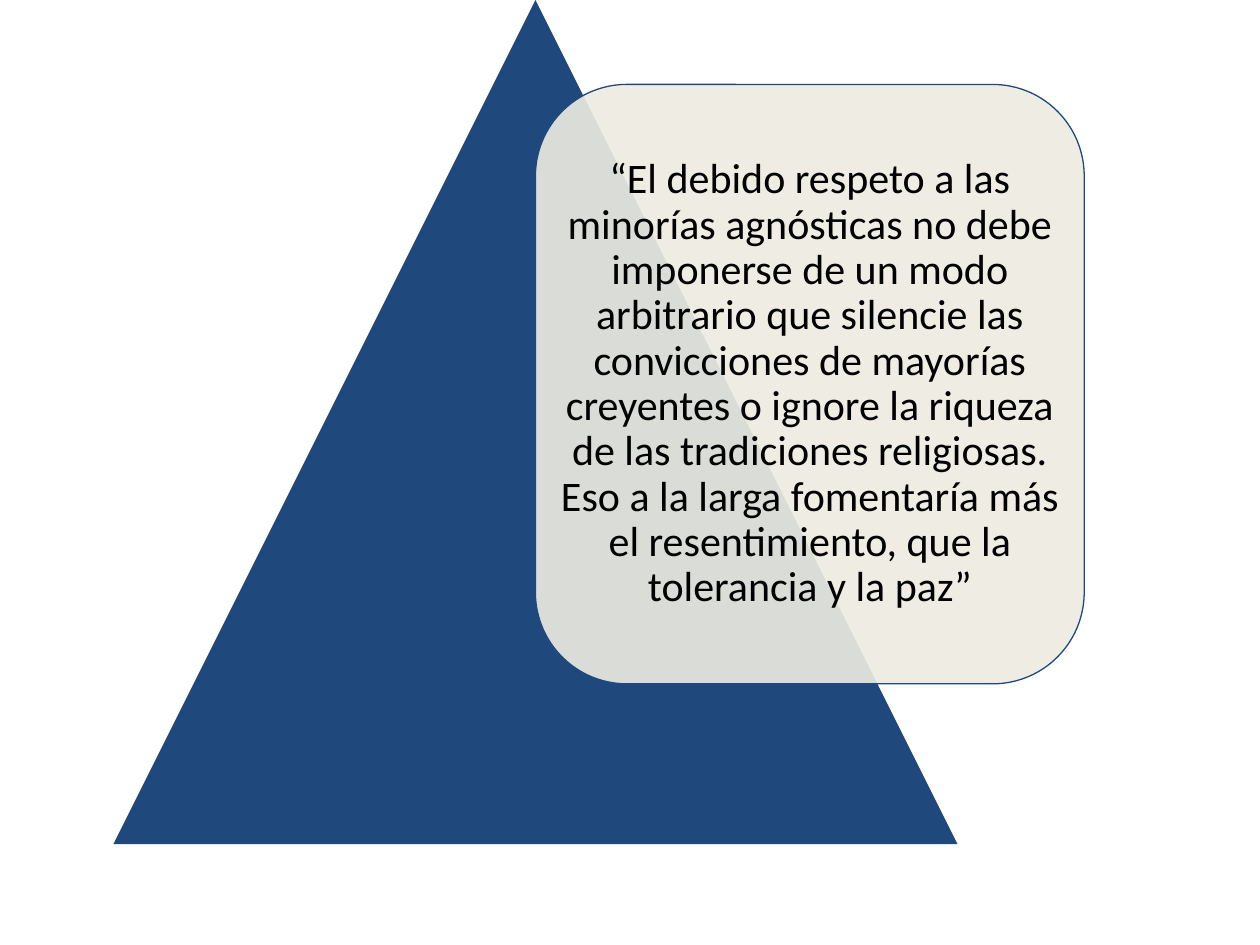
from lxml import etree
from pptx import Presentation
from pptx.dml.color import RGBColor
from pptx.enum.shapes import MSO_SHAPE
from pptx.enum.text import MSO_ANCHOR, PP_ALIGN
from pptx.oxml.ns import qn
from pptx.util import Inches, Pt

TRIANGLE = MSO_SHAPE.ISOSCELES_TRIANGLE
ROUNDED = MSO_SHAPE.ROUNDED_RECTANGLE
MIDDLE = MSO_ANCHOR.MIDDLE
CENTER = PP_ALIGN.CENTER

NAVY = RGBColor(0x1F, 0x49, 0x7D)
CREAM = RGBColor(0xEE, 0xEC, 0xE1)
BLACK = RGBColor(0, 0, 0)

SIDE = 6.7
TRIANGLE_LEFT = 0.9
CARD_LEFT = TRIANGLE_LEFT + SIDE / 2
CARD_TOP = SIDE / 10
CARD_BOX = (CARD_LEFT, CARD_TOP, SIDE * 0.65, SIDE * 0.71)

QUOTE = (
    "“El debido respeto a las minorías agnósticas no debe imponerse de un modo "
    "arbitrario que silencie las convicciones de mayorías creyentes o ignore la "
    "riqueza de las tradiciones religiosas. Eso a la larga fomentaría más el "
    "resentimiento, que la tolerancia y la paz”"
)


def add_panel(group, kind, box, fill, line=None, opacity=100):
    """Add a filled preset shape with an optional outline and opacity."""
    shape = group.shapes.add_shape(kind, *map(Inches, box))
    shape.shadow.inherit = False
    shape.fill.solid()
    shape.fill.fore_color.rgb = fill
    if opacity < 100:
        color = shape.fill._xPr.find(qn("a:solidFill"))[0]
        etree.SubElement(color, qn("a:alpha")).set("val", str(opacity * 1000))
    if line is None:
        shape.line.fill.background()
    else:
        shape.line.color.rgb = line
        shape.line.width = Pt(0.75)


def add_quote(group, box, text):
    """Add a centred, wrapped quotation."""
    text_frame = group.shapes.add_textbox(*map(Inches, box)).text_frame
    text_frame.word_wrap = True
    text_frame.vertical_anchor = MIDDLE
    text_frame.margin_left = text_frame.margin_right = Inches(0.1)
    text_frame.margin_top = text_frame.margin_bottom = Inches(0.1)
    paragraph = text_frame.paragraphs[0]
    paragraph.text = text
    paragraph.alignment = CENTER
    paragraph.line_spacing = 0.9
    font = paragraph.runs[0].font
    font.name = "Calibri"
    font.size = Pt(24)
    font.color.rgb = BLACK


def main():
    """Build the slide with a quotation card over a triangle."""
    presentation = Presentation()
    presentation.slide_width = Inches(10)
    presentation.slide_height = Inches(7.5)
    slide = presentation.slides.add_slide(presentation.slide_layouts[6])
    group = slide.shapes.add_group_shape()
    add_panel(group, TRIANGLE, (TRIANGLE_LEFT, 0, SIDE, SIDE), NAVY)
    add_panel(group, ROUNDED, CARD_BOX, CREAM, NAVY, opacity=90)
    add_quote(group, CARD_BOX, QUOTE)
    presentation.save("out.pptx")


if __name__ == "__main__":
    main()
